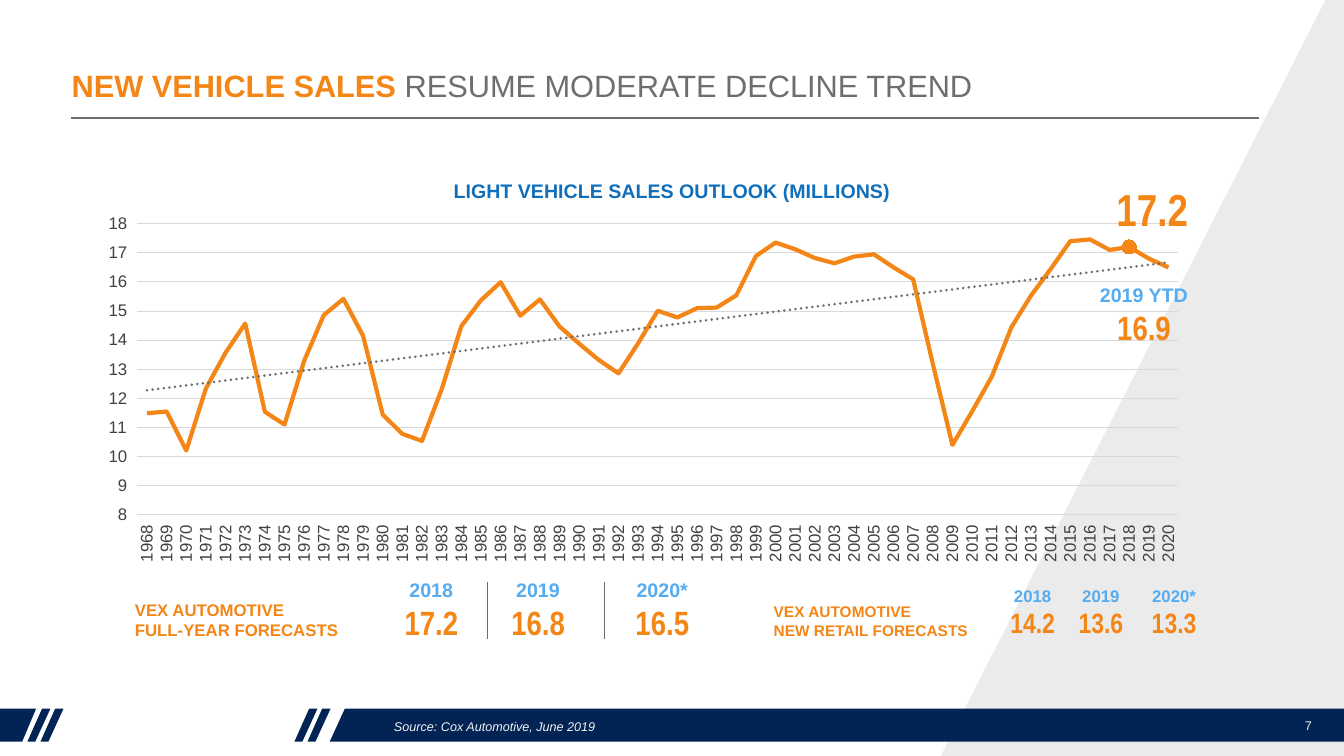
from copy import deepcopy
from lxml import etree
from pptx import Presentation
from pptx.chart.data import CategoryChartData
from pptx.dml.color import RGBColor
from pptx.enum.chart import XL_CHART_TYPE, XL_LABEL_POSITION, XL_MARKER_STYLE
from pptx.enum.shapes import MSO_CONNECTOR
from pptx.enum.text import MSO_ANCHOR, MSO_AUTO_SIZE, PP_ALIGN
from pptx.oxml import parse_xml
from pptx.oxml.ns import nsdecls, qn
from pptx.util import Cm, Pt

ORANGE = RGBColor(0xF3, 0x86, 0x17)
SKY = RGBColor(0x56, 0xAC, 0xF0)
BLUE = RGBColor(0x11, 0x6F, 0xBA)
NAVY = RGBColor(0x02, 0x24, 0x54)
GREY = RGBColor(0x6C, 0x6F, 0x71)
DIVIDER = RGBColor(0x69, 0x6D, 0x6F)
DARK = RGBColor(0x41, 0x41, 0x41)
LIGHT = RGBColor(0xD9, 0xD9, 0xD9)
PALE = RGBColor(0xF2, 0xF2, 0xF2)


def add_run(p, text, size, color, font="Arial", bold=True, italic=False):
    """Add formatted text; a closing newline becomes a line break of the same size."""
    r = p.add_run()
    r.text = text.rstrip("\n")
    r.font.size, r.font.name = Pt(size), font
    r.font.bold, r.font.italic = bold, italic
    r.font.color.rgb = color
    if text.endswith("\n"):
        br = etree.SubElement(p._p, qn("a:br"))
        br.append(deepcopy(r._r.rPr))


def add_box(left, top, width, height, align=PP_ALIGN.LEFT, anchor=MSO_ANCHOR.TOP, wrap=False):
    """Add an empty text box (lengths in cm) and return its text frame."""
    tf = s.shapes.add_textbox(Cm(left), Cm(top), Cm(width), Cm(height)).text_frame
    tf.word_wrap = wrap
    tf.vertical_anchor = anchor
    tf.paragraphs[0].alignment = align
    return tf


prs = Presentation()
prs.slide_width, prs.slide_height = Cm(33.87), Cm(19.05)
s = prs.slides.add_slide(prs.slide_layouts[5])

# Grey wedge and footer band
TOP, BOTTOM = 17.86, 18.69
outlines = [
    ([(34.32, -1.8), (34.39, 19.46), (23.5, 19.46)], LIGHT),
    ([(-0.25, TOP), (0.91, TOP), (0.56, BOTTOM), (-0.25, BOTTOM)], NAVY),
    ([(8.69, TOP), (34.24, TOP), (34.24, BOTTOM), (8.31, BOTTOM)], NAVY),
]
for x in (0.69, 1.02, 7.42, 7.75):
    stripe = [(x + 0.37, TOP), (x + 0.58, TOP), (x + 0.2, BOTTOM), (x, BOTTOM)]
    outlines.append((stripe, NAVY))
for points, color in outlines:
    corners = [(Cm(x), Cm(y)) for x, y in points]
    builder = s.shapes.build_freeform(*corners[0])
    builder.add_line_segments(corners[1:], close=True)
    sp = builder.convert_to_shape()
    sp.shadow.inherit = False
    sp.fill.solid()
    sp.fill.fore_color.rgb = color
    sp.line.fill.background()
    if color == LIGHT:
        clr = sp._element.spPr.find(qn("a:solidFill"))[0]
        etree.SubElement(clr, qn("a:alpha"), val="50000")

# Title
title = s.shapes.title
title.left, title.top, title.width, title.height = Cm(1.55), Cm(1.09), Cm(30.12), Cm(2.11)
tf = title.text_frame
tf.auto_size = MSO_AUTO_SIZE.NONE
tf.vertical_anchor = MSO_ANCHOR.MIDDLE
p = tf.paragraphs[0]
p.alignment = PP_ALIGN.LEFT
add_run(p, "NEW VEHICLE SALES ", 22, ORANGE)
add_run(p, "RESUME MODERATE DECLINE TREND", 22, GREY, bold=False)

# Chart
sales = [
    11.49, 11.55, 10.21, 12.34, 13.57, 14.57, 11.54, 11.1, 13.29, 14.86, 15.42,
    14.15, 11.44, 10.78, 10.54, 12.31, 14.48, 15.37, 15.99, 14.84, 15.4, 14.47,
    13.88, 13.32, 12.86, 13.89, 15.01, 14.78, 15.1, 15.12, 15.54, 16.89, 17.35,
    17.12, 16.82, 16.64, 16.87, 16.95, 16.5, 16.09, 13.19, 10.4, 11.55, 12.74,
    14.44, 15.53, 16.44, 17.4, 17.46, 17.1, 17.2, 16.8, 16.5,
]
data = CategoryChartData()
data.categories = [str(year) for year in range(1968, 2021)]
data.add_series("Series 1", sales)
chart = s.shapes.add_chart(
    XL_CHART_TYPE.LINE, Cm(1.83), Cm(3.96), Cm(29.06), Cm(12.07), data).chart
chart.has_legend = chart.has_title = False
chart.font.size, chart.font.name = Pt(12), "Arial"
chart.font.color.rgb = DARK
chart.plots[0].vary_by_categories = False

years, millions = chart.category_axis, chart.value_axis
for axis in (years, millions):
    axis.tick_labels.font.size = Pt(12)
    axis.format.line.fill.background()
years._element.txPr.find(qn("a:bodyPr")).set("rot", "-5400000")
millions.minimum_scale, millions.maximum_scale, millions.major_unit = 8, 18, 1
millions.has_major_gridlines = True
millions.major_gridlines.format.line.color.rgb = LIGHT
millions.major_gridlines.format.line.width = Pt(0.75)

series = chart.plots[0].series[0]
series.smooth = False
series.marker.style = XL_MARKER_STYLE.NONE
point = series.points[50]
for item in (series, point):
    item.format.line.color.rgb = ORANGE
    item.format.line.width = Pt(3)
point.marker.style, point.marker.size = XL_MARKER_STYLE.CIRCLE, 10
point.marker.format.fill.solid()
point.marker.format.fill.fore_color.rgb = ORANGE
point.marker.format.line.color.rgb = ORANGE
label = point.data_label
label.font.size, label.font.name, label.font.bold = Pt(32), "Arial Narrow", True
label.font.color.rgb = ORANGE
label.position = XL_LABEL_POSITION.ABOVE

dLbl = series._element.find(".//" + qn("c:dLbl"))
dLbl.insert(1, parse_xml(
    f'<c:layout {nsdecls("c")}><c:manualLayout><c:x val="0.02"/><c:y val="0"/>'
    '</c:manualLayout></c:layout>'))
series._element.find(qn("c:cat")).addprevious(parse_xml(
    f'<c:trendline {nsdecls("c", "a")}><c:spPr><a:ln w="25400" cap="rnd"><a:solidFill>'
    f'<a:srgbClr val="{GREY}"/></a:solidFill><a:prstDash val="sysDot"/></a:ln></c:spPr>'
    '<c:trendlineType val="linear"/><c:dispRSqr val="0"/><c:dispEq val="0"/></c:trendline>'))
plot_area = chart._chartSpace.find(".//" + qn("c:plotArea"))
for layout in plot_area.findall(qn("c:layout")):
    plot_area.remove(layout)
plot_area.insert(0, parse_xml(
    f'<c:layout {nsdecls("c")}><c:manualLayout><c:layoutTarget val="inner"/>'
    '<c:xMode val="edge"/><c:yMode val="edge"/><c:x val="0.056"/><c:y val="0.139"/>'
    '<c:w val="0.903"/><c:h val="0.608"/></c:manualLayout></c:layout>'))

tf = add_box(0, 4.39, 33.87, 0.86, PP_ALIGN.CENTER, wrap=True)
add_run(tf.paragraphs[0], "LIGHT VEHICLE SALES OUTLOOK (MILLIONS)", 14, BLUE)

# Forecast captions
for left, top, width, height, size, second_line in [
        (3.15, 14.99, 5.69, 1.27, 12, "FULL-YEAR FORECASTS"),
        (19.25, 15.06, 5.49, 1.19, 11, "NEW RETAIL FORECASTS")]:
    tf = add_box(left, top, width, height)
    add_run(tf.paragraphs[0], "VEX AUTOMOTIVE", size, ORANGE)
    add_run(tf.add_paragraph(), second_line, size, ORANGE)

# Forecast figures
for left, top, width, height, heading, value, small, large in [
        (9.93, 14.45, 1.88, 1.88, "2018", "17.2", 14, 24),
        (12.62, 14.45, 1.88, 1.88, "2019", "16.8", 14, 24),
        (15.75, 14.45, 1.88, 1.88, "2020*", "16.5", 14, 24),
        (27.46, 7.01, 2.74, 1.88, "2019 YTD", "16.9", 14, 24),
        (25.2, 14.63, 1.65, 1.63, "2018", "14.2", 12, 20),
        (26.92, 14.63, 1.65, 1.63, "2019", "13.6", 12, 20),
        (28.65, 14.63, 1.88, 1.63, "2020*", "13.3", 12, 20)]:
    p = add_box(left, top, width, height, PP_ALIGN.CENTER).paragraphs[0]
    add_run(p, heading + "\n", small, SKY)
    add_run(p, value, large, ORANGE, font="Arial Narrow")

# Title rule and dividers
for x1, y1, x2, y2, color, weight in [
        (1.78, 2.97, 31.72, 2.97, GREY, 1),
        (12.29, 14.66, 12.29, 16.1, DIVIDER, 0.75),
        (15.24, 14.66, 15.24, 16.1, DIVIDER, 0.75)]:
    line = s.shapes.add_connector(MSO_CONNECTOR.STRAIGHT, Cm(x1), Cm(y1), Cm(x2), Cm(y2))
    line.line.color.rgb = color
    line.line.width = Pt(weight)
    etree.SubElement(line._element.spPr, qn("a:effectLst"))

# Footer
tf = add_box(9.68, 17.88, 20.09, 0.84, anchor=MSO_ANCHOR.MIDDLE, wrap=True)
add_run(tf.paragraphs[0], "Source: Cox Automotive, June 2019", 9, PALE, bold=False, italic=True)
tf = add_box(32.36, 17.78, 1.22, 1.02, PP_ALIGN.CENTER, MSO_ANCHOR.MIDDLE)
add_run(tf.paragraphs[0], "7", 9, PALE, bold=False)

prs.save("out.pptx")
